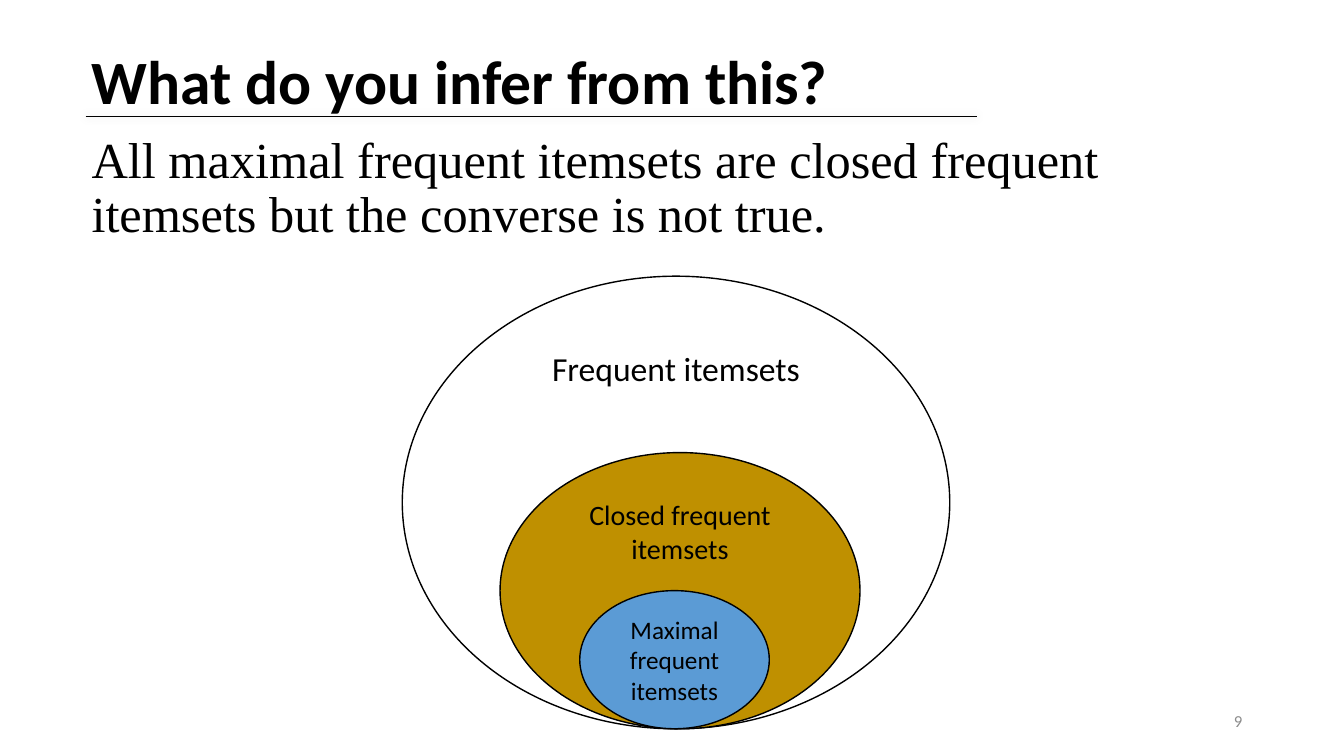
from lxml.etree import SubElement
from pptx import Presentation
from pptx.dml.color import RGBColor as Rgb
from pptx.enum.shapes import MSO_CONNECTOR as Conn, MSO_SHAPE as Shape
from pptx.enum.text import MSO_ANCHOR as Anchor, PP_ALIGN as Align
from pptx.oxml.ns import qn
from pptx.util import Inches, Pt

HUES = {"ink": "000000", "paper": "FFFFFF", "gold": "BF9000",
        "blue": "5B9BD5", "gray": "8C8C8C"}


def hue(name):
    return Rgb.from_string(HUES[name])


def place(shape, box):
    shape.left, shape.top, shape.width, shape.height = map(Inches, box)


def write(shape, text, size, font="Calibri", color="ink", bold=False,
          align=Align.LEFT, anchor=Anchor.TOP, space=None):
    frame = shape.text_frame
    frame.text = text
    frame.word_wrap = True
    frame.vertical_anchor = anchor
    para = frame.paragraphs[0]
    para.alignment = align
    para.line_spacing = space
    face = para.runs[0].font
    face.name, face.size, face.bold = font, Pt(size), bold
    face.color.rgb = hue(color)


def add_title(slide, box):
    title = slide.shapes.title
    place(title, box)
    write(title, "What do you infer from this?", 44, bold=True,
          anchor=Anchor.MIDDLE, space=0.9)

    # Rule under the title, with a faint soft shadow
    left, top = box[0] + 0.04, box[1] + 1.04
    rule = slide.shapes.add_connector(
        Conn.STRAIGHT, Inches(left), Inches(top), Inches(left + 8.84), Inches(top))
    rule.line.color.rgb = hue("ink")
    rule.line.width = Pt(0.5)
    effects = SubElement(rule._element.spPr, qn("a:effectLst"))
    shade = SubElement(effects, qn("a:outerShdw"), blurRad=str(Pt(6)),
                       dist="0", dir="13500000")
    tint = SubElement(shade, qn("a:srgbClr"), val=HUES["ink"])
    SubElement(tint, qn("a:alpha"), val="20000")


def add_text(slide, box, text, size, **style):
    write(slide.shapes.add_textbox(*map(Inches, box)), text, size, **style)


def add_sets(slide, box):
    left, top, width, height = box
    # Nested sets rest on one shared base: label, offset, size, fill, text size
    rings = [
        ("Frequent itemsets", 0, width, height, "paper", 24, Anchor.TOP),
        ("Closed frequent itemsets", 0.97, 3.57, 2.74, "gold", 20, Anchor.TOP),
        ("Maximal frequent itemsets", 1.76, 1.88, 1.37, "blue", 18, Anchor.MIDDLE),
    ]
    for label, shift, wide, high, fill, size, anchor in rings:
        ring = slide.shapes.add_shape(
            Shape.OVAL, Inches(left + shift), Inches(top + height - high),
            Inches(wide), Inches(high))
        ring.shadow.inherit = False
        ring.fill.solid()
        ring.fill.fore_color.rgb = hue(fill)
        ring.line.color.rgb = hue("ink")
        ring.line.width = Pt(1)
        write(ring, label, size, align=Align.CENTER, anchor=anchor)


def main():
    deck = Presentation()
    deck.slide_width, deck.slide_height = Inches(13.33), Inches(7.5)
    slide = deck.slides.add_slide(deck.slide_layouts[5])
    add_title(slide, (0.81, 0.11, 11.5, 1.45))
    add_text(slide, (0.81, 1.29, 11, 1.3),
             "All maximal frequent itemsets are closed frequent itemsets "
             "but the converse is not true.",
             36, font="Times New Roman", space=0.9)
    add_sets(slide, (3.99, 2.74, 5.43, 4.49))
    # Slide number
    add_text(slide, (9.42, 6.95, 3, 0.4), "9", 12, color="gray",
             align=Align.RIGHT, anchor=Anchor.MIDDLE)
    deck.save("out.pptx")


if __name__ == "__main__":
    main()
